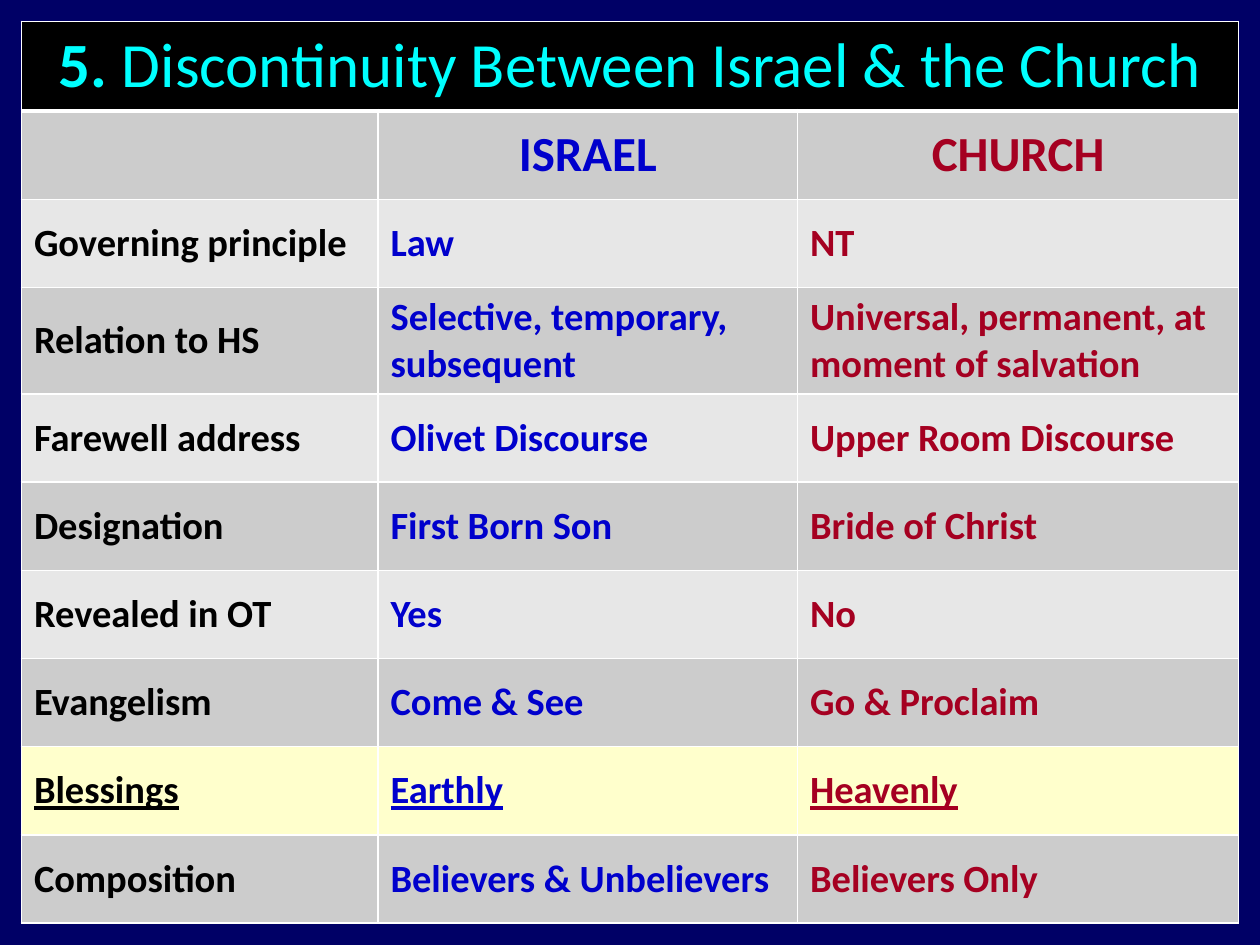
from lxml import etree
from pptx import Presentation
from pptx.dml.color import RGBColor
from pptx.enum.text import MSO_ANCHOR, PP_ALIGN
from pptx.oxml.ns import qn
from pptx.util import Inches, Pt

MIDDLE = MSO_ANCHOR.MIDDLE
LEFT, CENTER = PP_ALIGN.LEFT, PP_ALIGN.CENTER
COLORS = {
    "navy": "000066", "black": "000000", "cyan": "00FFFF", "white": "FFFFFF",
    "blue": "0000CC", "red": "A50021", "dark": "CCCCCC", "light": "E7E7E7",
    "highlight": "FFFFCC",
}
COLUMN_COLORS = ["black", "blue", "red"]
COLUMN_WIDTHS = [2.83, 3.33, 3.5]
ROW_HEIGHT = 0.7
TITLE = [("5. ", True), ("Discontinuity Between Israel & the Church", False)]
HEADINGS = ["", "ISRAEL", "CHURCH"]
COMPARISONS = [
    ("Governing principle", "Law", "NT"),
    ("Relation to HS", "Selective, temporary, subsequent",
     "Universal, permanent, at moment of salvation"),
    ("Farewell address", "Olivet Discourse", "Upper Room Discourse"),
    ("Designation", "First Born Son", "Bride of Christ"),
    ("Revealed in OT", "Yes", "No"),
    ("Evangelism", "Come & See", "Go & Proclaim"),
    ("Blessings", "Earthly", "Heavenly"),
    ("Composition", "Believers & Unbelievers", "Believers Only"),
]
HIGHLIGHTED = "Blessings"


class SlideBuilder:
    """Holds the style and the current slide, and adds elements to it."""

    def __init__(self, page, font="Calibri"):
        self.page = page
        self.font = font

    def color(self, name):
        return RGBColor.from_string(COLORS[name])

    def background(self, name):
        fill = self.page.background.fill
        fill.solid()
        fill.fore_color.rgb = self.color(name)

    def table(self, left, top, widths, row_count, row_height):
        frame = self.page.shapes.add_table(
            row_count, len(widths), Inches(left), Inches(top),
            Inches(sum(widths)), Inches(row_count * row_height))
        table = frame.table
        for column, width in zip(table.columns, widths):
            column.width = Inches(width)
        for row in table.rows:
            row.height = Inches(row_height)
        return table

    def borders(self, cell, top=1, bottom=1):
        properties = cell._tc.get_or_add_tcPr()
        sides = {"a:lnL": 1, "a:lnR": 1, "a:lnT": top, "a:lnB": bottom}
        for place, (tag, points) in enumerate(sides.items()):
            line = etree.Element(qn(tag), w=str(Pt(points)))
            fill = etree.SubElement(line, qn("a:solidFill"))
            etree.SubElement(fill, qn("a:srgbClr"), val=COLORS["white"])
            properties.insert(place, line)

    def cell(self, cell, spans, size, color, fill, align=LEFT, underline=False):
        cell.fill.solid()
        cell.fill.fore_color.rgb = self.color(fill)
        cell.vertical_anchor = MIDDLE
        para = cell.text_frame.paragraphs[0]
        para.alignment = align
        para.font.name = self.font
        para.font.size = Pt(size)
        para.font.color.rgb = self.color(color)
        para.font.underline = underline
        for text, bold in spans:
            span = para.add_run()
            span.text = text
            span.font.name = self.font
            span.font.size = Pt(size)
            span.font.bold = bold
            span.font.underline = underline
            span.font.color.rgb = self.color(color)


def main():
    deck = Presentation()
    deck.slide_width, deck.slide_height = Inches(10), Inches(7.5)
    builder = SlideBuilder(deck.slides.add_slide(deck.slide_layouts[6]))
    builder.background("navy")

    rows = [HEADINGS, *COMPARISONS]
    table = builder.table(0.17, 0.17, COLUMN_WIDTHS, len(rows) + 1, ROW_HEIGHT)
    title = table.cell(0, 0)
    title.merge(table.cell(0, len(COLUMN_WIDTHS) - 1))
    builder.cell(title, TITLE, 36, "cyan", "black", CENTER)
    for column in range(len(COLUMN_WIDTHS)):
        builder.borders(table.cell(0, column), bottom=3)

    for number, texts in enumerate(rows, start=1):
        heading = number == 1
        highlighted = texts[0] == HIGHLIGHTED
        band = "dark" if number % 2 else "light"
        for column, (text, color) in enumerate(zip(texts, COLUMN_COLORS)):
            cell = table.cell(number, column)
            builder.cell(cell, [(text, True)] if text else [],
                         28 if heading else 22, color,
                         "highlight" if highlighted else band,
                         CENTER if heading else LEFT, highlighted)
            builder.borders(cell, top=3 if heading else 1)

    deck.save("out.pptx")


if __name__ == "__main__":
    main()
